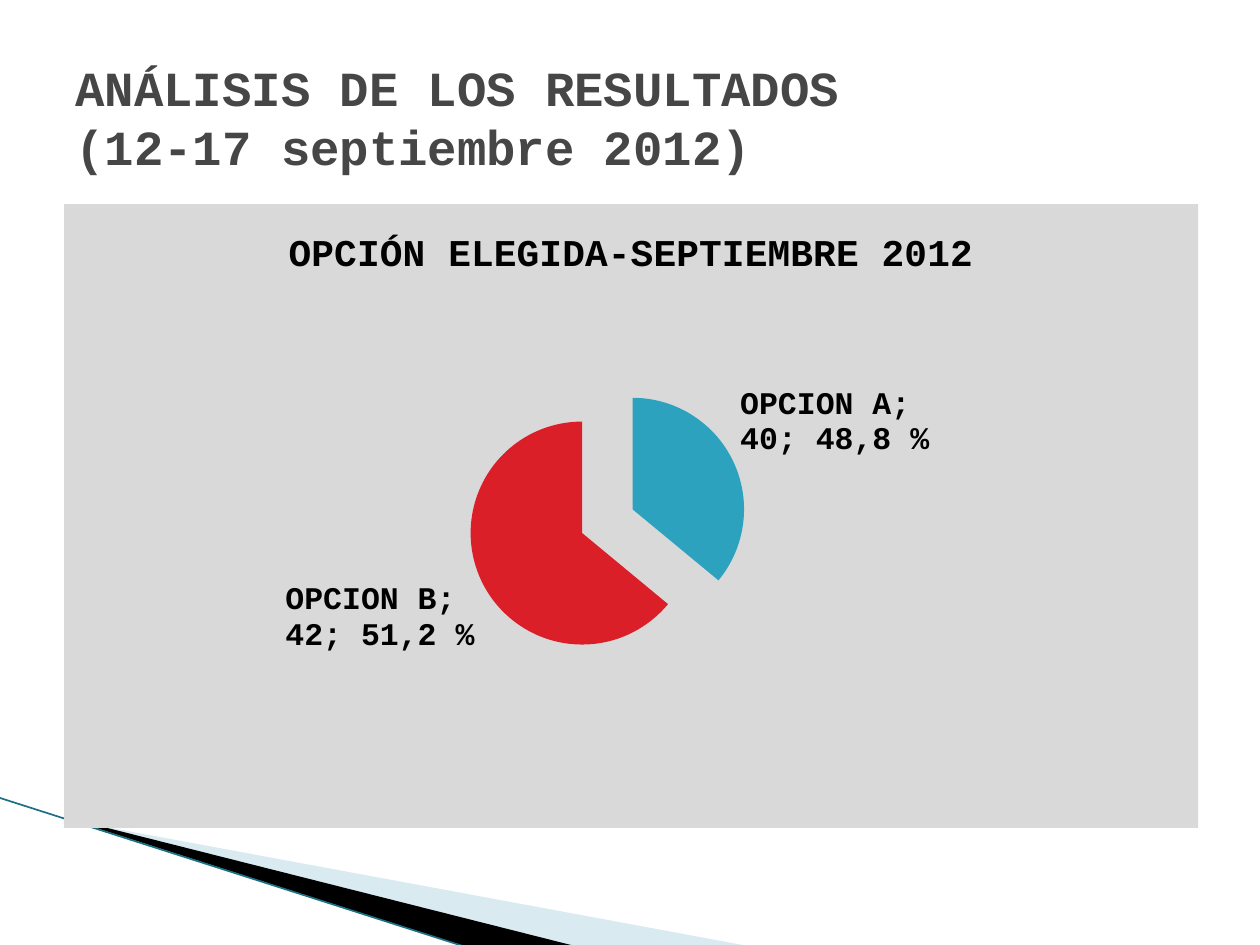
from lxml import etree
from pptx import Presentation
from pptx import util as u
from pptx.chart.data import CategoryChartData
from pptx.dml.color import RGBColor
from pptx.enum import chart as charts, shapes, text
from pptx.oxml.ns import qn

# Content
FONT = "Courier New"
TITLE = "ANÁLISIS DE LOS RESULTADOS\v(12-17 septiembre 2012)"
CHART_TITLE = "OPCIÓN ELEGIDA-SEPTIEMBRE 2012"
OPTIONS = [  # category, value, colour, label lines
    ("OPCION A", 27, "2DA2BF", "OPCION A; \n40; 48,8 %"),
    ("OPCION B", 48, "DA1F28", "OPCION B; \n42; 51,2 %"),
]
WEDGES = [  # corners, colour, opacity in percent
    ([(0.55, 6.51), (5.95, 7.51), (4.56, 7.51), (0.55, 6.5)], "A0CBDC", 40),
    ([(0.53, 6.49), (4.57, 7.51), (3.72, 7.52), (0.54, 6.5)], "000000", 100),
]
EDGE = [(-0.01, 6.33), (3.71, 7.52)]
PLOT_AREA = {"x": 0.096, "y": 0.285, "w": 0.766, "h": 0.447}


def inches(*lengths):
    return [u.Inches(length) for length in lengths]


def paint(fill, colour):
    fill.solid()
    fill.fore_color.rgb = RGBColor.from_string(colour)


def style(font, size, colour="000000", bold=True):
    font.name, font.size, font.bold = FONT, u.Pt(size), bold
    font.color.rgb = RGBColor.from_string(colour)


def write(frame, words, align=None, **format):
    frame.text = words
    for para in frame.paragraphs:
        para.alignment = align
        for span in para.runs:
            style(span.font, **format)


deck = Presentation()
deck.slide_width, deck.slide_height = inches(10, 7.5)
page = deck.slides.add_slide(deck.slide_layouts[5])
paint(page.background.fill, "FFFFFF")

# Corner decoration
for corners, colour, opacity in WEDGES:
    points = [inches(*corner) for corner in corners]
    builder = page.shapes.build_freeform(*points[0])
    builder.add_line_segments(points[1:])
    wedge = builder.convert_to_shape()
    wedge.shadow.inherit = False
    wedge.line.fill.background()
    paint(wedge.fill, colour)
    if opacity < 100:
        tint = wedge.fill._xPr.find(".//" + qn("a:srgbClr"))
        etree.SubElement(tint, qn("a:alpha")).set("val", str(opacity * 1000))

edge = page.shapes.add_connector(
    shapes.MSO_CONNECTOR.STRAIGHT, *inches(*EDGE[0], *EDGE[1]))
edge.line.width = u.Pt(0.95)
paint(edge.line.fill, "1B7083")
etree.SubElement(edge._element.spPr, qn("a:effectLst"))

# Title
title = page.shapes.title
title.left, title.top, title.width, title.height = inches(0.5, 0.3, 9, 1.25)
title.text_frame.vertical_anchor = text.MSO_ANCHOR.MIDDLE
title.text_frame.word_wrap = True
write(title.text_frame, TITLE, text.PP_ALIGN.LEFT, size=28, colour="464646")

# Pie chart
data = CategoryChartData()
data.categories = [option[0] for option in OPTIONS]
data.add_series("Series 1", [option[1] for option in OPTIONS])
chart = page.shapes.add_chart(
    charts.XL_CHART_TYPE.PIE, *inches(0.51, 1.62, 9, 4.95), data).chart
style(chart.font, 18)
chart.has_legend = False
chart.has_title = True
write(chart.chart_title.text_frame, CHART_TITLE, size=21.6)

pie = chart.plots[0]
pie.vary_by_categories = True
series = pie.series[0]
labels = series.data_labels
labels.number_format, labels.number_format_is_linked = "0%", False
labels.show_category_name = labels.show_value = labels.show_percentage = True
labels.position = charts.XL_LABEL_POSITION.OUTSIDE_END

for index, (_, _, colour, label) in enumerate(OPTIONS):
    point = series.points[index]
    paint(point.format.fill, colour)
    point.format.line.fill.background()
    write(point.data_label.text_frame, label, text.PP_ALIGN.LEFT, size=18)
    point.data_label.position = charts.XL_LABEL_POSITION.OUTSIDE_END

# Labels show category, value and share
for label_xml in series._element.iter(qn("c:dLbl")):
    for flag in ("showCatName", "showVal", "showPercent"):
        label_xml.find(qn("c:" + flag)).set("val", "1")

# Pull all slices out of the pie
explosion = etree.Element(qn("c:explosion"), val="25")
series._element.find(qn("c:dPt")).addprevious(explosion)

# Fixed plot area and grey chart background
plot_xml = chart._chartSpace.chart.plotArea
for old in plot_xml.findall(qn("c:layout")):
    plot_xml.remove(old)
layout = etree.Element(qn("c:layout"))
manual = etree.SubElement(layout, qn("c:manualLayout"))
settings = {"layoutTarget": "inner", "xMode": "edge", "yMode": "edge", **PLOT_AREA}
for name, value in settings.items():
    etree.SubElement(manual, qn("c:" + name), val=str(value))
plot_xml.insert(0, layout)

back = etree.Element(qn("c:spPr"))
fill = etree.SubElement(back, qn("a:solidFill"))
etree.SubElement(fill, qn("a:srgbClr"), val="D9D9D9")
etree.SubElement(etree.SubElement(back, qn("a:ln")), qn("a:noFill"))
chart._chartSpace.find(qn("c:txPr")).addprevious(back)

deck.save("out.pptx")
